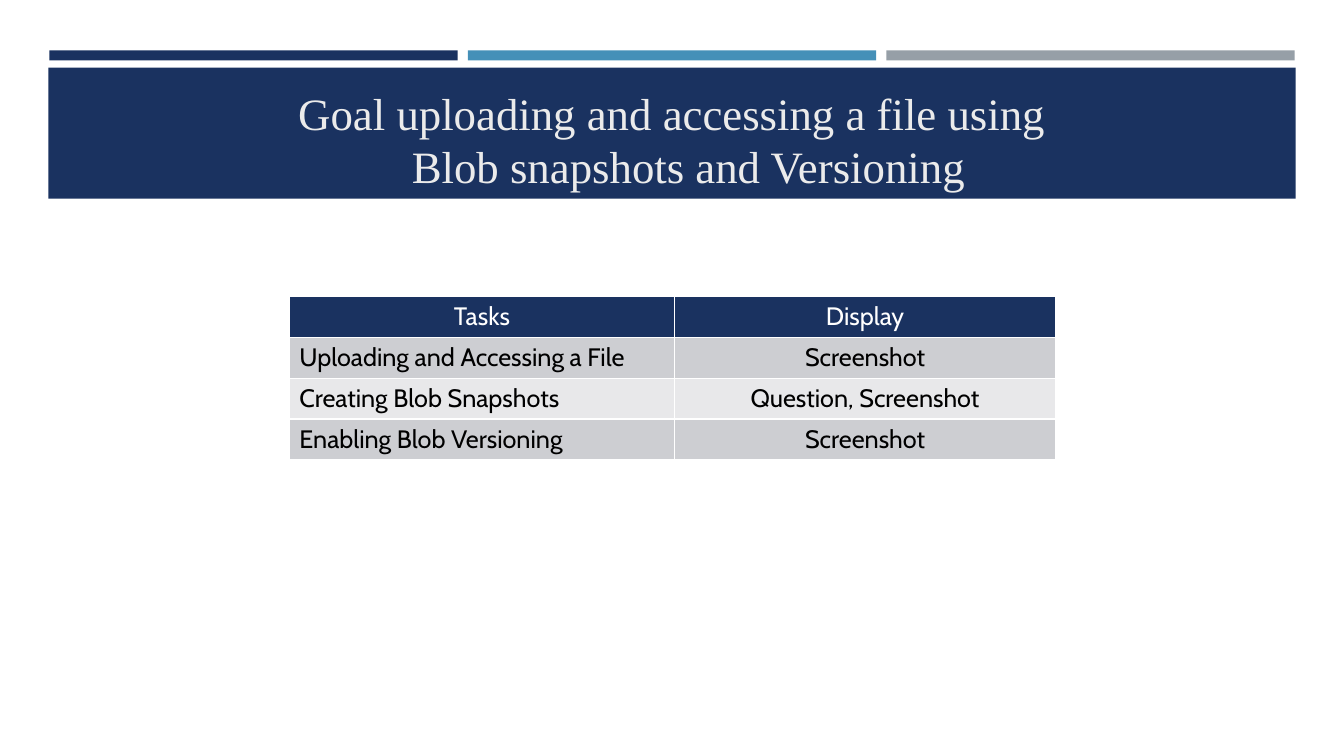
from pptx import Presentation
from pptx.dml.color import RGBColor as RGB
from pptx.enum.shapes import MSO_SHAPE as Shape
from pptx.enum.text import MSO_ANCHOR as Anchor, MSO_AUTO_SIZE as AutoSize, PP_ALIGN as Align
from pptx.oxml import parse_xml
from pptx.oxml.ns import nsdecls
from pptx.util import Inches, Pt

HEADING = "Goal uploading and accessing a file using Blob snapshots and Versioning"
TASKS = [
    ("Tasks", "Display"),
    ("Uploading and Accessing a File", "Screenshot"),
    ("Creating Blob Snapshots", "Question, Screenshot"),
    ("Enabling Blob Versioning", "Screenshot"),
]
COLORS = {
    "navy": "1A3260", "blue": "4590B8", "gray": "969FA7",
    "heading": "EBEBEB", "white": "FFFFFF", "black": "000000",
    "dark_row": "CDCED2", "light_row": "E8E8EA",
}
BAR_COLORS = ["navy", "blue", "gray"]
BAR_LEFT, BAR_STEP = 0.49, 4.15
COLUMN_WIDTHS = [3.82, 3.78]
ROW_HEIGHT = 0.4
HEADING_FORMAT = {"name": "Times New Roman", "size": Pt(32), "bold": False}
CELL_FORMAT = {"name": "Cabin", "size": Pt(18), "bold": False}


def color(key):
    return RGB.from_string(COLORS[key])


def format_font(font, values, color_key):
    for attribute, value in values.items():
        setattr(font, attribute, value)
    font.color.rgb = color(color_key)


def add_block(slide, box, color_key):
    block = slide.shapes.add_shape(Shape.RECTANGLE, *map(Inches, box))
    block.shadow.inherit = False
    block.fill.solid()
    block.fill.fore_color.rgb = color(color_key)
    block.line.fill.background()


def add_heading(slide):
    heading = slide.shapes.title
    heading.element.getparent().append(heading.element)
    box = {"left": 2.54, "top": 0.73, "width": 8.25, "height": 1.3}
    for attribute, value in box.items():
        setattr(heading, attribute, Inches(value))
    frame = heading.text_frame
    frame.text = HEADING
    frame.word_wrap = True
    frame.auto_size = AutoSize.NONE
    frame.vertical_anchor = Anchor.MIDDLE
    paragraph = frame.paragraphs[0]
    paragraph.alignment = Align.CENTER
    hanging = paragraph._p.get_or_add_pPr()
    hanging.set("marL", str(Inches(0.33)))
    hanging.set("indent", str(-Inches(0.33)))
    format_font(paragraph.runs[0].font, HEADING_FORMAT, "heading")


def add_borders(cell):
    properties = cell._tc.get_or_add_tcPr()
    for side in "LRTB":
        properties.append(parse_xml(
            f'<a:ln{side} {nsdecls("a")} w="{Pt(1)}"><a:solidFill>'
            f'<a:srgbClr val="{COLORS["white"]}"/></a:solidFill></a:ln{side}>'))


def add_tasks(slide):
    table = slide.shapes.add_table(
        len(TASKS), len(COLUMN_WIDTHS), Inches(2.87), Inches(2.94),
        Inches(sum(COLUMN_WIDTHS)), Inches(ROW_HEIGHT * len(TASKS))).table
    for column, width in zip(table.columns, COLUMN_WIDTHS):
        column.width = Inches(width)
    for r, task in enumerate(TASKS):
        header = r == 0
        row_color = "navy" if header else "dark_row" if r % 2 else "light_row"
        for c, label in enumerate(task):
            cell = table.cell(r, c)
            add_borders(cell)
            cell.fill.solid()
            cell.fill.fore_color.rgb = color(row_color)
            cell.text = label
            paragraph = cell.text_frame.paragraphs[0]
            paragraph.alignment = Align.CENTER if header or c else Align.LEFT
            format_font(paragraph.runs[0].font, CELL_FORMAT, "white" if header else "black")


def main():
    deck = Presentation()
    deck.slide_width, deck.slide_height = Inches(13.33), Inches(7.5)
    slide = deck.slides.add_slide(deck.slide_layouts[5])
    for i, bar_color in enumerate(BAR_COLORS):
        add_block(slide, (BAR_LEFT + i * BAR_STEP, 0.5, 4.05, 0.1), bar_color)
    add_block(slide, (0.48, 0.67, 12.37, 1.3), "navy")
    add_heading(slide)
    add_tasks(slide)
    deck.save("out.pptx")


if __name__ == "__main__":
    main()
